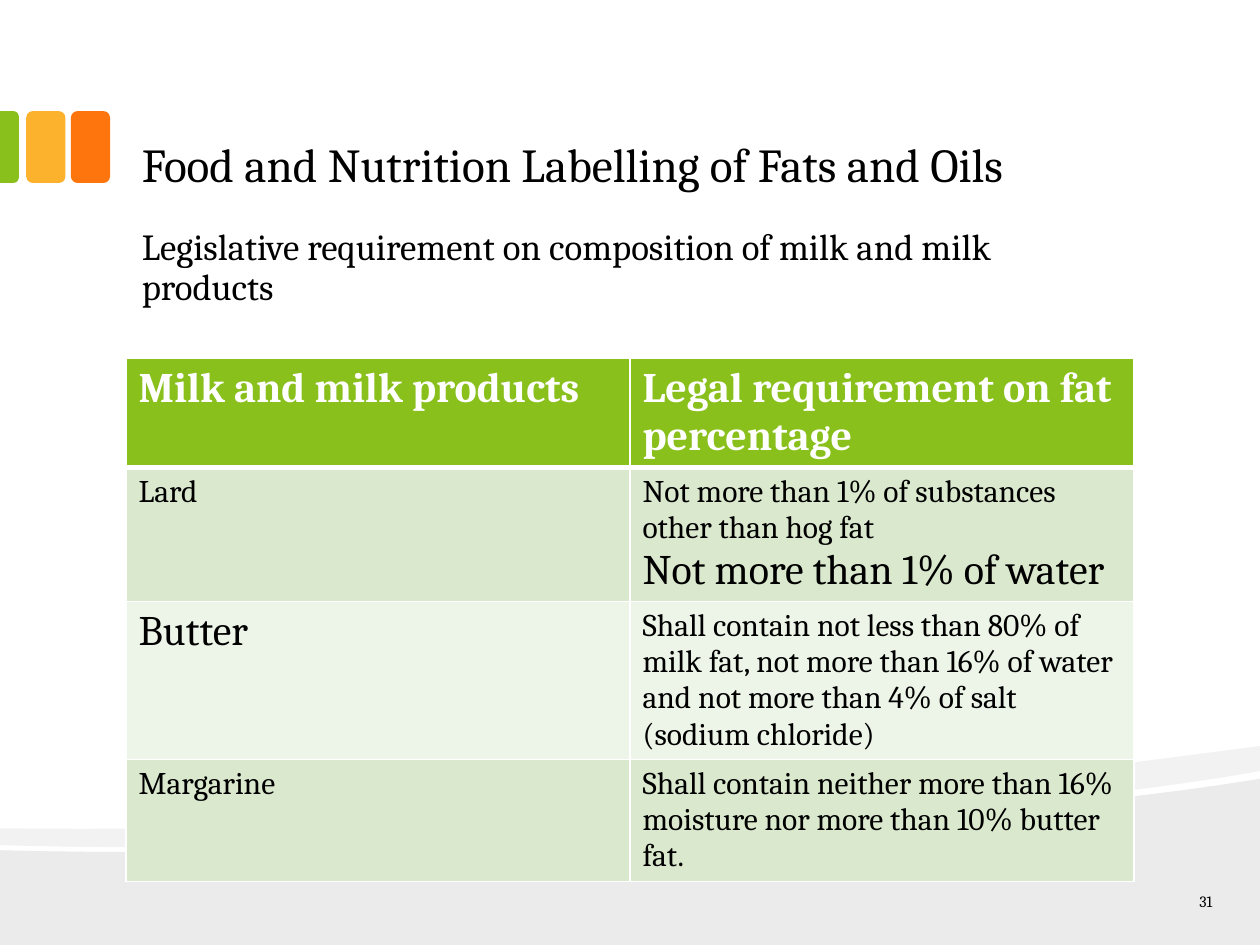
from lxml import etree
from pptx import Presentation, util as u
from pptx.dml.color import RGBColor
from pptx.enum import shapes as sh, text as t
from pptx.oxml.ns import qn

FONT = "Cambria"
ROWS = [
    [[("Milk and milk products", 24)], [("Legal requirement on fat percentage", 24)]],
    [[("Lard", 18)], [("Not more than 1% of substances other than hog fat\u00a0", 18),
                      ("Not more than 1% of water", 24)]],
    [[("Butter", 24)], [("Shall contain not less than 80% of milk fat, not more than 16% "
                         "of water and not more than 4% of salt (sodium chloride)", 18)]],
    [[("Margarine", 18)], [("Shall contain neither more than 16% moisture nor more than "
                            "10% butter fat.", 18)]],
]
HIGHS = [2.18, 2.7, 3.18, 2.46]
HILL = [(1, 0.0), (1, 1), (0, 1), (0, 0.43),
        [(0.26, 0.49), (0.78, 0.28), (1, 0)]]


def rgb(code):
    """Turn a hex string into a colour."""
    return RGBColor.from_string(code)


def put(obj, **vals):
    """Set attributes from format values."""
    for key, val in vals.items():
        setattr(obj, key, val)


def paint(shape, code):
    """Give a shape a flat fill without line or shadow."""
    shape.fill.solid()
    shape.fill.fore_color.rgb = rgb(code)
    shape.line.fill.background()
    shape.shadow.inherit = False


def write(frame, lines, code="000000", bold=False, **para):
    """Write pairs of text and size as paragraphs."""
    for i, (line, size) in enumerate(lines):
        par = frame.paragraphs[0] if i == 0 else frame.add_paragraph()
        put(par, **para)
        run = par.add_run()
        run.text = line
        put(run.font, name=FONT, size=u.Pt(size), bold=bold)
        run.font.color.rgb = rgb(code)


def label(shape, box, lines, anchor, **para):
    """Place a text shape in its box and write its lines."""
    put(shape, **dict(zip(("left", "top", "width", "height"), map(u.Cm, box))))
    side, edge = u.Cm(0.32), u.Cm(0.17)
    put(shape.text_frame, word_wrap=True, auto_size=t.MSO_AUTO_SIZE.NONE,
        vertical_anchor=anchor, margin_left=side, margin_right=side,
        margin_top=edge, margin_bottom=edge)
    write(shape.text_frame, lines, **para)


def curve(a, b, c, d, steps=24):
    """Return points along a cubic curve."""
    out = []
    for i in range(1, steps + 1):
        k = i / steps
        j = 1 - k
        out.append(tuple(j**3 * p + 3 * j * j * k * q + 3 * j * k * k * r + k**3 * s
                         for p, q, r, s in zip(a, b, c, d)))
    return out


def wave(slide, box, parts, code):
    """Draw an outline of corners and curves given as shares of the box."""
    x, y, w, h = box
    pts = []
    for part in parts:
        pts += curve(pts[-1], *part) if isinstance(part, list) else [part]
    pts = [(u.Cm(x + w * a), u.Cm(y + h * b)) for a, b in pts]
    form = slide.shapes.build_freeform(*pts[0])
    form.add_line_segments(pts[1:], close=True)
    paint(form.convert_to_shape(), code)


def ground(slide, box):
    """Draw the two grey waves at the foot."""
    x, y, w, h = box
    wave(slide, (x, y + 0.66, w, h - 0.66), HILL, "EBEBEB")
    band = [(1, 0), (1, 0.24),
            [(0.94, 0.37), (0.86, 0.49), (0.77, 0.59)],
            [(0.52, 0.86), (0.19, 1.03), (0, 0.95)], (0, 0.79),
            [(0.49, 0.84), (0.73, 0.42), (1, 0)]]
    wave(slide, (x, y, w, 2.1), band, "F2F2F2")


def tabs(slide, box):
    """Draw the three coloured tabs at the left edge."""
    x, y, w, h = box
    kind = sh.MSO_SHAPE
    for i, code in enumerate(("FCB22C", "FE750E")):
        tab = slide.shapes.add_shape(kind.ROUNDED_RECTANGLE, u.Cm(x + 0.53 + i * 0.9),
                                     u.Cm(y), u.Cm(w), u.Cm(h))
        paint(tab, code)
    cut = 0.38
    tab = slide.shapes.add_shape(kind.ROUND_2_SAME_RECTANGLE, u.Cm(x + (cut - h) / 2),
                                 u.Cm(y + (h - cut) / 2), u.Cm(h), u.Cm(cut))
    tab.rotation = 90
    tab.adjustments[0] = 0.29
    paint(tab, "89C01C")


def edge(cell, low):
    """Give a cell white borders, with its own width below."""
    prop = cell._tc.get_or_add_tcPr()
    for i, (tag, size) in enumerate((("lnL", 1), ("lnR", 1), ("lnT", 1), ("lnB", low))):
        line = etree.Element(qn("a:" + tag), w=str(u.Pt(size)))
        fill = etree.SubElement(line, qn("a:solidFill"))
        etree.SubElement(fill, qn("a:srgbClr"), val="FFFFFF")
        prop.insert(i, line)


def grid(slide, box):
    """Build the table of legal fat limits."""
    table = slide.shapes.add_table(len(ROWS), 2, *map(u.Cm, box)).table
    for i, (row, high) in enumerate(zip(ROWS, HIGHS)):
        table.rows[i].height = u.Cm(high)
        head = i == 0
        back = "89C01C" if head else ("EDF4E8", "DAE8CD")[i % 2]
        for j, lines in enumerate(row):
            cell = table.cell(i, j)
            cell.fill.solid()
            cell.fill.fore_color.rgb = rgb(back)
            write(cell.text_frame, lines, "FFFFFF" if head else "000000", head)
            edge(cell, 3 if head else 1)


def main():
    """Build and save the slide."""
    deck = Presentation()
    put(deck, slide_width=u.Cm(25.4), slide_height=u.Cm(19.05))
    slide = deck.slides.add_slide(deck.slide_layouts[5])
    ground(slide, (0, 15.04, 25.4, 4.01))
    tabs(slide, (0, 2.24, 0.79, 1.45))
    mode, side = t.MSO_ANCHOR, t.PP_ALIGN
    label(slide.shapes.title, (2.54, 0.43, 20.32, 3.61),
          [("Food and Nutrition Labelling of Fats and Oils", 27)], mode.BOTTOM,
          alignment=side.LEFT)
    blank = (0, 0, 0, 0)
    label(slide.shapes.add_textbox(*blank), (2.54, 4.45, 20.32, 12.7),
          [("Legislative requirement on composition of milk and milk products", 21)],
          mode.TOP, line_spacing=0.9, space_before=u.Pt(13.5))
    grid(slide, (2.54, 7.22, 20.32, sum(HIGHS)))
    label(slide.shapes.add_textbox(*blank), (23.06, 17.91, 1.7, 0.51), [("31", 9)],
          mode.MIDDLE, alignment=side.RIGHT)
    deck.save("out.pptx")


if __name__ == "__main__":
    main()
